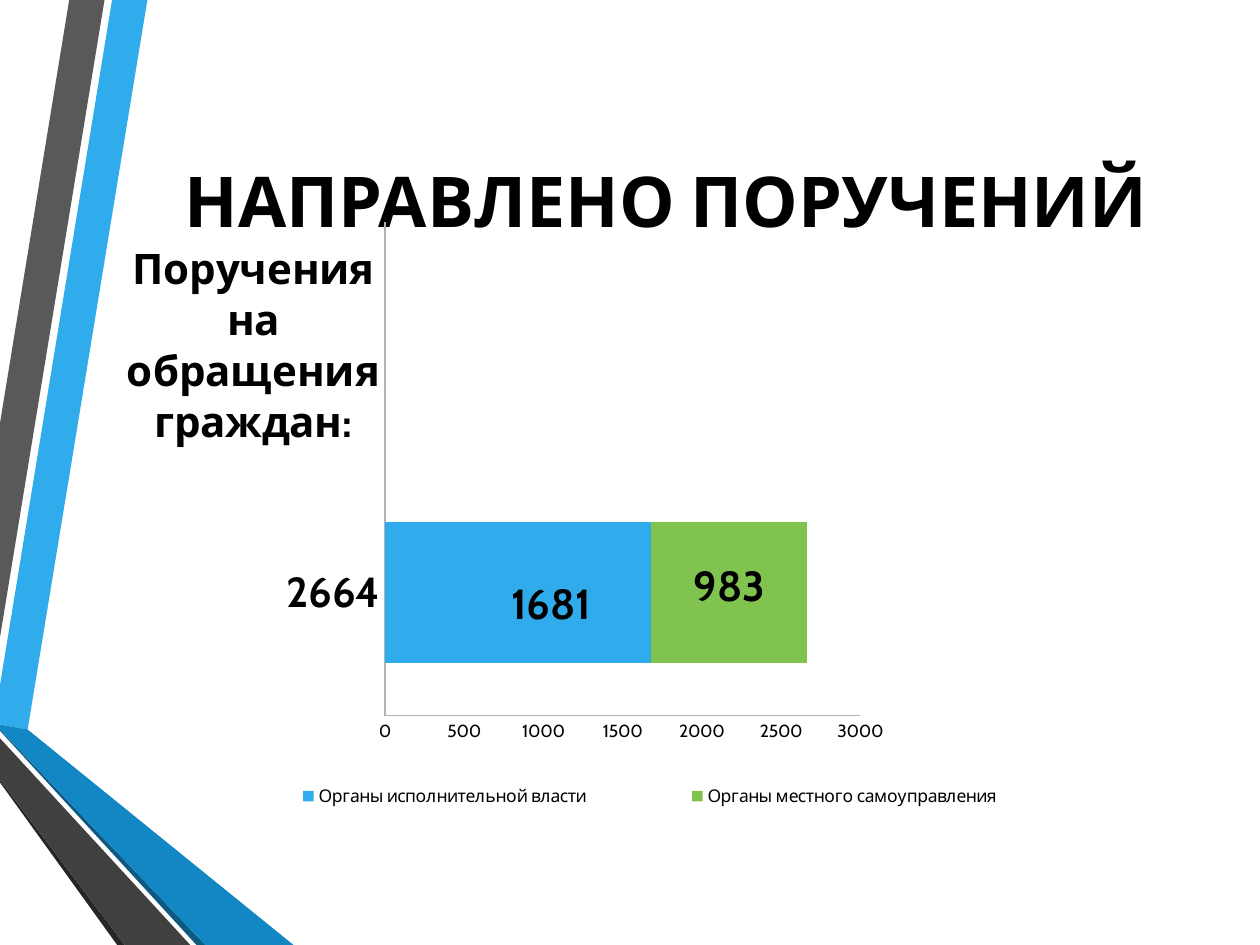
from dataclasses import dataclass

from lxml import etree
from pptx import Presentation
from pptx.chart.data import CategoryChartData
from pptx.dml.color import RGBColor
from pptx.enum.chart import XL_CHART_TYPE, XL_LEGEND_POSITION, XL_TICK_MARK
from pptx.enum.text import MSO_ANCHOR, PP_ALIGN
from pptx.oxml.ns import qn
from pptx.util import Cm, Pt

BAR_STACKED = XL_CHART_TYPE.BAR_STACKED
LEGEND_RIGHT = XL_LEGEND_POSITION.RIGHT
TICK_NONE = XL_TICK_MARK.NONE
MIDDLE = MSO_ANCHOR.MIDDLE
CENTER = PP_ALIGN.CENTER

FONT = "Cabin"
UNIT = Cm(0.0254)
COLORS = {
    "blue": "30ACEC", "gray": "595959", "black_edge": "262626",
    "navy_edge": "0C5A82", "deep_blue": "1287C3", "charcoal": "404040",
    "green": "80C34F", "axis": "B3B3B3", "text": "000000",
}


@dataclass
class Ribbon:
    color: str
    points: list[tuple[int, int]]


@dataclass
class Series:
    name: str
    value: int
    color: str
    label_shift: tuple[float, float]


RIBBONS = [
    Ribbon("blue", [(0, 544), (0, 575), (22, 579), (117, 0), (89, 0)]),
    Ribbon("gray", [(83, 0), (55, 0), (0, 336), (0, 506)]),
    Ribbon("black_edge", [(0, 619), (0, 621), (93, 750), (99, 750)]),
    Ribbon("navy_edge", [(0, 579), (0, 580), (156, 750), (163, 750)]),
    Ribbon("deep_blue", [(0, 579), (163, 750), (233, 750), (22, 579), (0, 575)]),
    Ribbon("charcoal", [(0, 619), (99, 750), (151, 750), (0, 586)]),
]
CATEGORIES = ["2664", "Поручения на обращения граждан:"]
SERIES = [
    Series("Органы исполнительной власти", 1681, "blue", (0.03, 0.02)),
    Series("Органы местного самоуправления", 983, "green", (0, -0.01)),
]


def rgb(name: str) -> RGBColor:
    return RGBColor.from_string(COLORS[name])


def style_font(font, size: float, bold: bool = False) -> None:
    font.name, font.size, font.bold = FONT, Pt(size), bold
    font.color.rgb = rgb("text")


def draw_ribbon(s, ribbon: Ribbon) -> None:
    start, *rest = ribbon.points
    builder = s.shapes.build_freeform(*start, scale=UNIT)
    builder.add_line_segments(rest, close=True)
    sp = builder.convert_to_shape()
    sp.shadow.inherit = False
    sp.fill.solid()
    sp.fill.fore_color.rgb = rgb(ribbon.color)
    sp.line.fill.background()


def draw_title(s, text: str) -> None:
    sp = s.shapes.add_textbox(Cm(2.72), Cm(1.27), Cm(21.41), Cm(5.51))
    tf = sp.text_frame
    tf.word_wrap = True
    tf.vertical_anchor = MIDDLE
    tf.text = text
    p = tf.paragraphs[0]
    p.alignment = CENTER
    style_font(p.runs[0].font, 40, True)


def manual_layout(**values: str | float) -> etree._Element:
    layout = etree.Element(qn("c:layout"))
    manual = etree.SubElement(layout, qn("c:manualLayout"))
    for tag, value in values.items():
        etree.SubElement(manual, qn(f"c:{tag}")).set("val", str(value))
    return layout


def place(parent: etree._Element, after: str | None, layout: etree._Element) -> None:
    for old in parent.findall(qn("c:layout")):
        parent.remove(old)
    if after is None:
        parent.insert(0, layout)
    else:
        parent.find(qn(after)).addnext(layout)


def style_axis(axis, size: float, bold: bool = False) -> None:
    axis.has_major_gridlines = False
    axis.major_tick_mark = axis.minor_tick_mark = TICK_NONE
    axis.format.line.color.rgb = rgb("axis")
    style_font(axis.tick_labels.font, size, bold)


def style_series(series, info: Series) -> None:
    series.format.fill.solid()
    series.format.fill.fore_color.rgb = rgb(info.color)
    series.data_labels.show_value = True
    style_font(series.data_labels.font, 24, True)
    style_font(series.points[0].data_label.font, 24, True)
    x, y = info.label_shift
    label = next(series._element.iter(qn("c:dLbl")))
    place(label, "c:idx", manual_layout(x=x, y=y))


def draw_chart(s) -> None:
    data = CategoryChartData()
    data.categories = CATEGORIES
    for info in SERIES:
        data.add_series(info.name, [info.value, None])
    chart = s.shapes.add_chart(
        BAR_STACKED, Cm(1.65), Cm(4.47), Cm(22.23), Cm(12.32), data).chart
    style_font(chart.font, 10)
    chart.has_title = False
    plot = chart.plots[0]
    plot.vary_by_categories = False
    plot.gap_width, plot.overlap = 75, 100
    for series, info in zip(plot.series, SERIES):
        style_series(series, info)
    style_axis(chart.category_axis, 24, True)
    style_axis(chart.value_axis, 10)
    chart.value_axis.minimum_scale = 0
    chart.value_axis.maximum_scale = 3000
    chart.value_axis.major_unit = 500
    chart.has_legend = True
    chart.legend.position = LEGEND_RIGHT
    chart.legend.include_in_layout = False
    style_font(chart.legend.font, 10)
    place(chart.legend._element, "c:legendPos", manual_layout(
        xMode="edge", yMode="edge", x=0.11, y=0.9, w=0.81, h=0.08))
    area = next(chart._chartSpace.iter(qn("c:plotArea")))
    place(area, None, manual_layout(
        layoutTarget="inner", xMode="edge", yMode="edge",
        x=0.275, y=0, w=0.431, h=0.808))


def main() -> None:
    """Build the slide on instructions sent in response to citizens' appeals."""
    prs = Presentation()
    prs.slide_width, prs.slide_height = Cm(25.4), Cm(19.05)
    s = prs.slides.add_slide(prs.slide_layouts[6])
    for ribbon in RIBBONS:
        draw_ribbon(s, ribbon)
    draw_title(s, "НАПРАВЛЕНО ПОРУЧЕНИЙ")
    draw_chart(s)
    prs.save("out.pptx")


if __name__ == "__main__":
    main()
